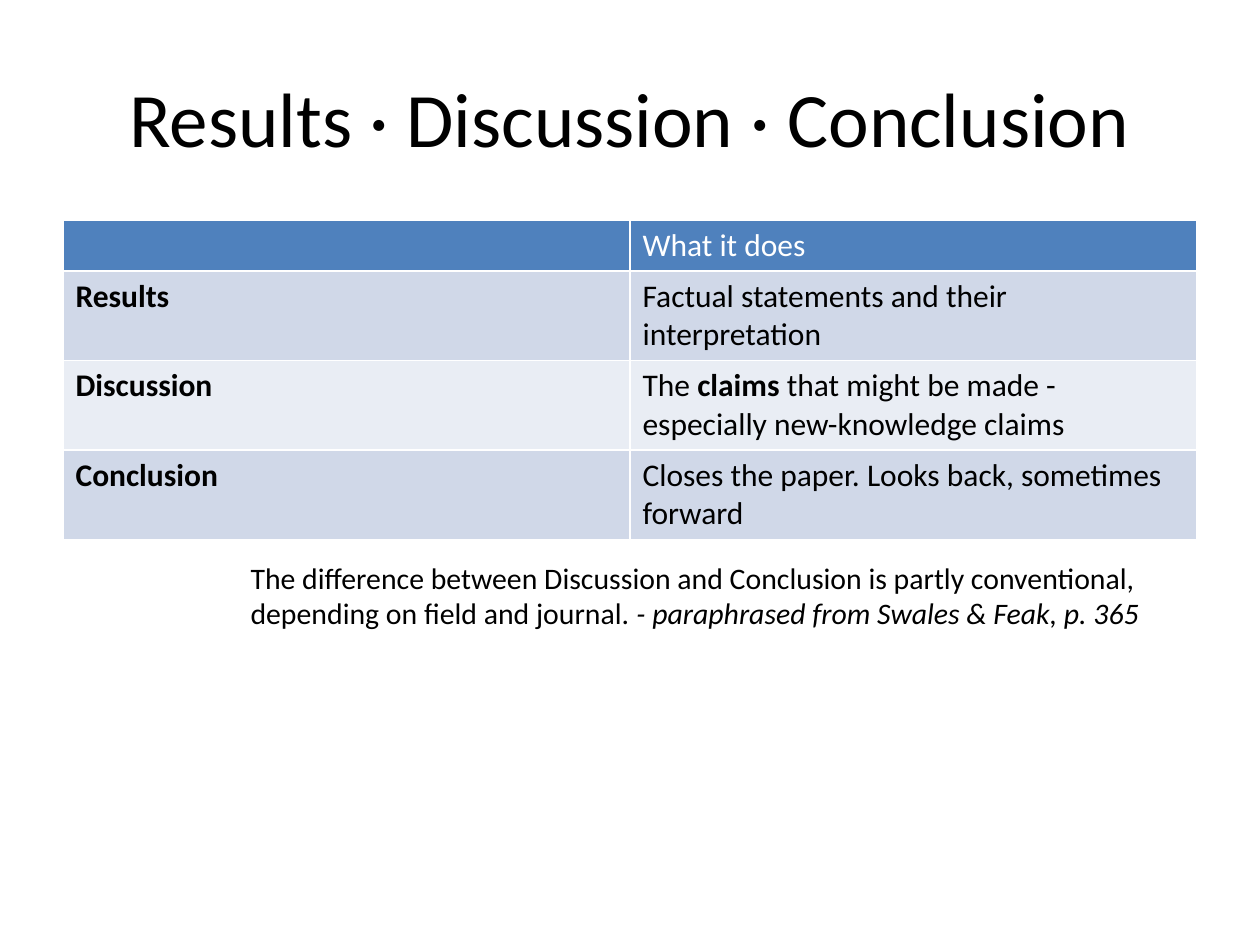
from dataclasses import dataclass

from lxml.etree import SubElement as Sub
from pptx import Presentation
from pptx.dml.color import RGBColor as RGB
from pptx.enum.text import MSO_ANCHOR as Anchor, PP_ALIGN as Align
from pptx.oxml.ns import qn
from pptx.util import Inches, Pt


@dataclass(frozen=True)
class Theme:
    """Colours, type sizes and line width of the slide."""
    font: str = "Calibri"
    ink: str = "000000"
    white: str = "FFFFFF"
    head: str = "4F81BD"
    bands: tuple = ("D0D8E8", "E9EDF4")
    title: int = 44
    body: int = 18
    note: int = 17
    rule: int = 1


T = Theme()
WIDE, HIGH = 10, 7.5
ROWS = [
    [[], [("What it does", "")]],
    [[("Results", "b")],
     [("Factual statements and their interpretation", "")]],
    [[("Discussion", "b")],
     [("The ", ""), ("claims", "b"),
      (" that might be made - especially new-knowledge claims", "")]],
    [[("Conclusion", "b")],
     [("Closes the paper. Looks back, sometimes forward", "")]],
]
NOTE = [
    ("The difference between Discussion and Conclusion is partly "
     "conventional, depending on field and journal. ", ""),
    ("- paraphrased from Swales & Feak, p. 365", "i"),
]


def area(left, top, wide, high):
    """Turn shares of the slide into a box."""
    return (Inches(left * WIDE), Inches(top * HIGH),
            Inches(wide * WIDE), Inches(high * HIGH))


def write(para, runs, size, color=T.ink):
    """Add styled runs to a paragraph."""
    for text, style in runs:
        run = para.add_run()
        run.text = text
        font = run.font
        font.name, font.size = T.font, Pt(size)
        font.bold, font.italic = "b" in style, "i" in style
        font.color.rgb = RGB.from_string(color)


def frame(slide, box):
    """Add a wrapping text box and return its text frame."""
    body = slide.shapes.add_textbox(*box).text_frame
    body.word_wrap = True
    return body


def edge(cell):
    """Draw white rules on all four sides of a cell."""
    props = cell._tc.get_or_add_tcPr()
    for side in "LRTB":
        line = Sub(props, qn(f"a:ln{side}"), w=str(Pt(T.rule)))
        fill = Sub(line, qn("a:solidFill"))
        Sub(fill, qn("a:srgbClr"), val=T.white)


def title(slide, box):
    """Place the centred heading."""
    body = frame(slide, box)
    body.vertical_anchor = Anchor.MIDDLE
    para = body.paragraphs[0]
    para.alignment = Align.CENTER
    write(para, [("Results · Discussion · Conclusion", "")], T.title)


def grid(slide, box):
    """Place the table with a short header and equal body rows."""
    table = slide.shapes.add_table(len(ROWS), len(ROWS[0]), *box).table
    head = Inches(0.4)
    rest = (box[3] - head) // (len(ROWS) - 1)
    for r, row in enumerate(ROWS):
        table.rows[r].height = rest if r else head
        back = T.bands[(r - 1) % 2] if r else T.head
        for c, runs in enumerate(row):
            cell = table.cell(r, c)
            edge(cell)
            cell.fill.solid()
            cell.fill.fore_color.rgb = RGB.from_string(back)
            write(cell.text_frame.paragraphs[0], runs, T.body,
                  T.ink if r else T.white)


def note(slide, box):
    """Place the indented remark under the table."""
    para = frame(slide, box).paragraphs[0]
    props = para._p.get_or_add_pPr()
    props.set("marL", str(Inches(1.39)))
    props.set("indent", "0")
    write(para, NOTE, T.note)


def main():
    """Build and save the slide."""
    deck = Presentation()
    deck.slide_width, deck.slide_height = Inches(WIDE), Inches(HIGH)
    slide = deck.slides.add_slide(deck.slide_layouts[6])
    left, wide = 0.05, 0.9
    title(slide, area(left, 0.04, wide, 1.25 / HIGH))
    grid(slide, area(left, 1.75 / HIGH, wide, 2.53 / HIGH))
    note(slide, area(left, 4.39 / HIGH, wide, 0.59 / HIGH))
    deck.save("out.pptx")


if __name__ == "__main__":
    main()
